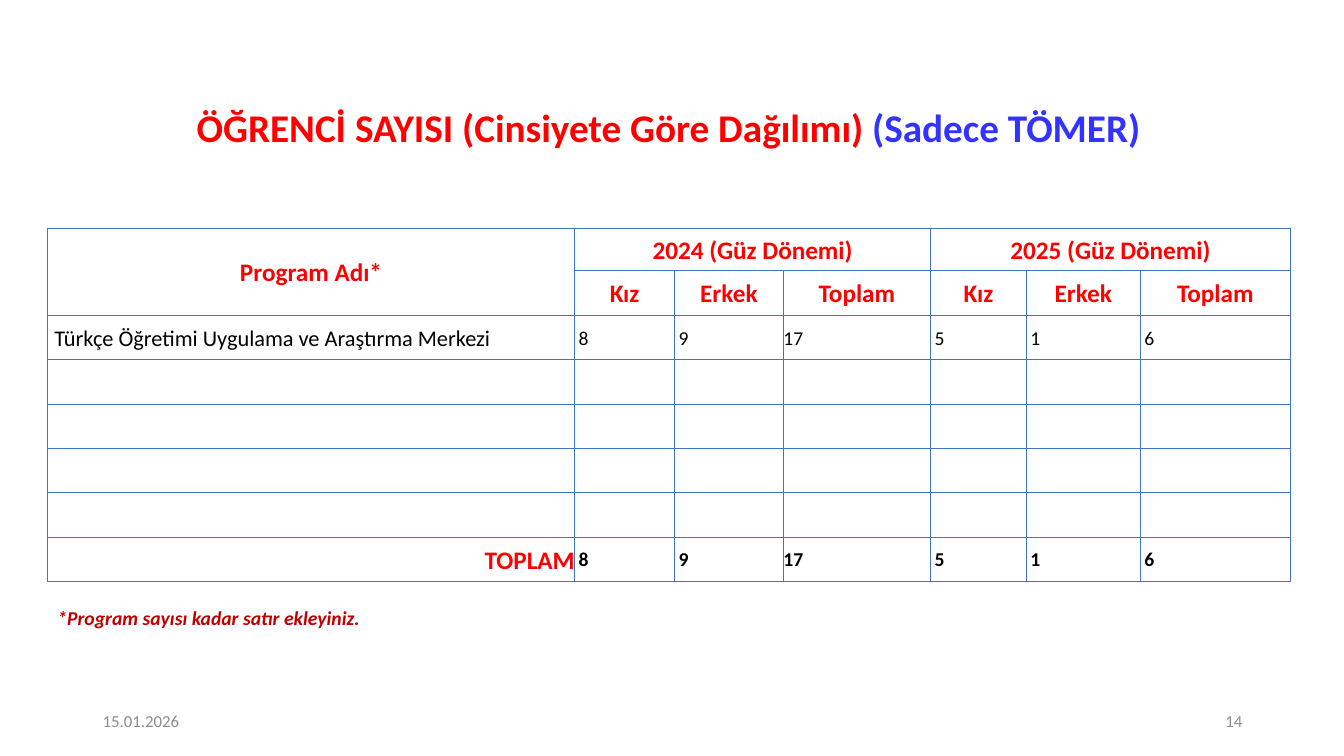
from lxml.etree import SubElement
from pptx import Presentation
from pptx.dml.color import RGBColor
from pptx.enum.text import MSO_ANCHOR as Anchor, PP_ALIGN as Align
from pptx.oxml.ns import qn
from pptx.util import Inches, Pt

# Content
RED, BLUE, DARK_RED, GREY, BLACK, LINE = (
    "FF0000", "3333FF", "C00000", "8C8C8C", "000000", "4472C4")
TITLE = [("ÖĞRENCİ SAYISI (Cinsiyete Göre Dağılımı) ", RED), ("(Sadece TÖMER)", BLUE)]
NOTE = "*Program sayısı kadar satır ekleyiniz."
DATE, NUMBER = "15.01.2026", "14"
TERMS = ["2024 (Güz Dönemi)", "2025 (Güz Dönemi)"]
GROUPS = ["Kız", "Erkek", "Toplam"]
PROGRAM = "Türkçe Öğretimi Uygulama ve Araştırma Merkezi"
COUNTS = [8, 9, 17, 5, 1, 6]
WIDTHS = [5.23, 0.99, 1.08, 1.46, 0.95, 1.13, 1.49]
HEIGHTS = [0.41, 0.45] + [0.44] * 6
FIRST, LAST = 2, len(HEIGHTS) - 1


def color(value):
    return RGBColor.from_string(value)


def add_span(para, text, size, shade, bold=False, italic=False):
    span = para.add_run()
    span.text = text
    font = span.font
    font.name, font.size, font.bold, font.italic = "Calibri", Pt(size), bold, italic
    font.color.rgb = color(shade)


def add_label(page, place, text, size, shade, align=Align.LEFT, anchor=Anchor.MIDDLE, **style):
    frame = page.shapes.add_textbox(*map(Inches, place)).text_frame
    frame.word_wrap = True
    frame.vertical_anchor = anchor
    para = frame.paragraphs[0]
    para.alignment = align
    add_span(para, text, size, shade, **style)


def style_cell(cell):
    properties = cell._tc.get_or_add_tcPr()
    for side in ("lnL", "lnR", "lnT", "lnB"):
        border = SubElement(properties, qn(f"a:{side}"), w=str(Pt(1)))
        fill = SubElement(border, qn("a:solidFill"))
        SubElement(fill, qn("a:srgbClr"), val=LINE)
    cell.fill.background()


def write_cell(cell, text, size, shade, align=Align.LEFT, bold=True, indent=0.0):
    cell.vertical_anchor = Anchor.MIDDLE
    cell.margin_left = Inches(indent)
    cell.margin_right = cell.margin_top = cell.margin_bottom = 0
    para = cell.text_frame.paragraphs[0]
    para.alignment = align
    para.line_spacing = 1.07
    add_span(para, text, size, shade, bold)


deck = Presentation()
deck.slide_width, deck.slide_height = Inches(13.33), Inches(7.5)
page = deck.slides.add_slide(deck.slide_layouts[5])

# Title
title = page.shapes.title
title.left, title.top, title.width, title.height = map(Inches, (0.73, 0.96, 12.06, 0.66))
frame = title.text_frame
frame.vertical_anchor = Anchor.MIDDLE
frame.margin_right = Inches(0.36)
heading = frame.paragraphs[0]
heading.alignment = Align.CENTER
heading.line_spacing = 0.9
for text, shade in TITLE:
    add_span(heading, text, 28, shade, bold=True)

# Date, page number and note
add_label(page, (0.92, 6.95, 3, 0.4), DATE, 12, GREY)
add_label(page, (9.42, 6.95, 3, 0.4), NUMBER, 12, GREY, Align.RIGHT)
add_label(page, (0.47, 5.96, 8.48, 0.34), NOTE, 14, DARK_RED,
          anchor=Anchor.TOP, bold=True, italic=True)

# Table grid
table = page.shapes.add_table(
    len(HEIGHTS), len(WIDTHS), Inches(0.47), Inches(2.27),
    Inches(sum(WIDTHS)), Inches(sum(HEIGHTS))).table
table.first_row = table.horz_banding = False
for column, width in zip(table.columns, WIDTHS):
    column.width = Inches(width)
for row, height in zip(table.rows, HEIGHTS):
    row.height = Inches(height)
for cell in table.iter_cells():
    style_cell(cell)

# Table headings
table.cell(0, 0).merge(table.cell(1, 0))
write_cell(table.cell(0, 0), "Program Adı*", 18, RED, Align.CENTER)
for index, term in enumerate(TERMS):
    start = 1 + index * len(GROUPS)
    table.cell(0, start).merge(table.cell(0, start + len(GROUPS) - 1))
    write_cell(table.cell(0, start), term, 18, RED, Align.CENTER)
    for offset, group in enumerate(GROUPS):
        write_cell(table.cell(1, start + offset), group, 18, RED, Align.CENTER)

# Program row and totals row
write_cell(table.cell(FIRST, 0), PROGRAM, 16, BLACK, bold=False, indent=0.07)
write_cell(table.cell(LAST, 0), "TOPLAM", 18, RED, Align.RIGHT)
for column, count in enumerate(COUNTS, start=1):
    indent = 0.04 if count < 10 else 0
    for row in (FIRST, LAST):
        write_cell(table.cell(row, column), str(count), 14, BLACK,
                   bold=row == LAST, indent=indent)

deck.save("out.pptx")
